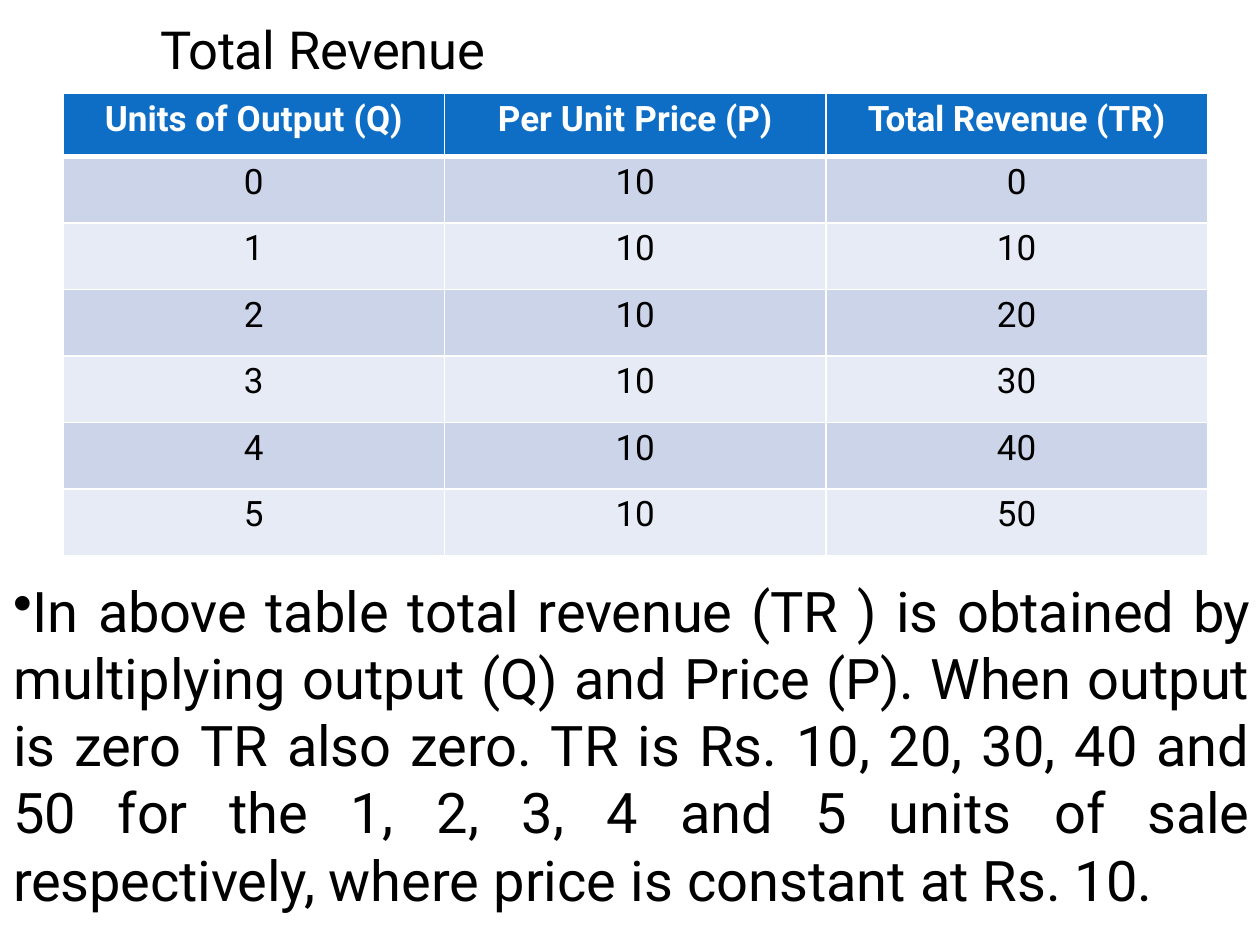
from lxml.etree import SubElement as Sub
from pptx import Presentation
from pptx.dml.color import RGBColor as RGB
from pptx.enum.text import MSO_ANCHOR as Anchor, PP_ALIGN as Align
from pptx.oxml.ns import qn
from pptx.util import Pt

FONT = "Roboto"
COLORS = {"ink": "000000", "paper": "FFFFFF", "head": "0E6EC5",
          "odd": "CCD4EA", "even": "E7EBF5"}

# Runs are (text, letter spacing in points)
TITLE = [("Total ", -0.3), ("Revenue", -0.1)]
HEADS = [
    [("Units of ", 0), ("Output ", 0.1), ("(Q)", 0)],
    [("Per ", 0), ("Unit ", 0.1), ("Price (P)", 0)],
    [("Total ", -0.2), ("Revenue ", -0.1), ("(TR)", 0.1)],
]
NOTE = [
    ("In ", -0.1), ("above ", -0.2), ("table ", -0.1), ("total ", -0.2),
    ("revenue (TR ", -0.1), (") ", 0), ("is obtained ", -0.1), ("by ", -0.5),
    ("multiplying output ", 0), ("(Q) ", -0.1), ("and ", 0),
    ("Price (P). When ", -0.1), ("output ", 0), ("is zero ", -0.1),
    ("TR ", 0), ("also zero. ", -0.1), ("TR ", 0), ("is ", -0.1),
    ("Rs. ", 0), ("10, 20, ", -0.1), ("30, ", 0), ("40 ", -0.1),
    ("and ", 0), ("50 for the ", -0.1), ("1, ", 0.3),
    ("2, 3, 4 and 5 units ", 0), ("of sale respectively, ", -0.1),
    ("where price ", 0), ("is ", -0.1), ("constant ", 0), ("at ", -0.1),
    ("Rs. ", 0), ("10.", -0.1),
]
PRICE = 10
UNITS = range(6)


def rgb(name):
    return RGB.from_string(COLORS[name])


def add_runs(para, runs, size, color="ink", bold=False):
    for text, gap in runs:
        run = para.add_run()
        run.text = text
        font = run.font
        font.name, font.size, font.bold = FONT, Pt(size), bold
        font.color.rgb = rgb(color)
        run._r.get_or_add_rPr().set("spc", str(round(gap * 100)))


def add_text(slide, box, runs, size, align, anchor, bullet=None):
    frame = slide.shapes.add_textbox(*map(Pt, box)).text_frame
    frame.word_wrap = True
    frame.margin_left = frame.margin_right = frame.margin_bottom = 0
    frame.margin_top = Pt(1)
    frame.vertical_anchor = anchor
    para = frame.paragraphs[0]
    para.alignment = align
    props = para._p.get_or_add_pPr()
    props.set("marL", str(Pt(1)))
    props.set("indent", "0")
    if bullet:
        Sub(props, qn("a:buChar"), char=bullet)
    add_runs(para, runs, size)


def add_edge(cell, side, width):
    line = Sub(cell._tc.get_or_add_tcPr(), qn(f"a:ln{side}"), w=str(Pt(width)))
    fill = Sub(line, qn("a:solidFill"))
    Sub(fill, qn("a:srgbClr"), val=COLORS["paper"])


def fill_cell(cell, runs, row):
    # The rule between header and body is thicker than the rest
    for side in "LRTB":
        thick = (row, side) in ((0, "B"), (1, "T"))
        add_edge(cell, side, 3 if thick else 1)
    cell.fill.solid()
    cell.fill.fore_color.rgb = rgb(
        "head" if row == 0 else "odd" if row % 2 else "even")
    cell.margin_left = cell.margin_right = cell.margin_bottom = 0
    cell.margin_top = Pt(3)
    para = cell.text_frame.paragraphs[0]
    para.alignment = Align.CENTER
    add_runs(para, runs, 20, "ink" if row else "paper", row == 0)


def add_grid(slide, box, rows, head, step):
    table = slide.shapes.add_table(
        len(rows), len(rows[0]), *map(Pt, box)).table
    for col in table.columns:
        col.width = Pt(box[2] / len(rows[0]))
    for i, cells in enumerate(rows):
        table.rows[i].height = Pt(step if i else head)
        for j, runs in enumerate(cells):
            fill_cell(table.cell(i, j), runs, i)


def main():
    deck = Presentation()
    deck.slide_width, deck.slide_height = Pt(720), Pt(540)
    slide = deck.slides.add_slide(deck.slide_layouts[6])

    # Title
    add_text(slide, (90.7, 8, 538.5, 38), TITLE, 30, Align.LEFT, Anchor.MIDDLE)

    # Revenue table: total = units x price
    body = [[[(str(n), 0)], [(str(PRICE), -0.2)], [(str(n * PRICE), 0)]]
            for n in UNITS]
    add_grid(slide, (36, 53.5, 654, 264), [HEADS] + body, 36, 38)

    # Explanation
    add_text(slide, (6.5, 328.3, 707.5, 194.4), NOTE, 32,
             Align.JUSTIFY, Anchor.TOP, "•")

    deck.save("out.pptx")


if __name__ == "__main__":
    main()
